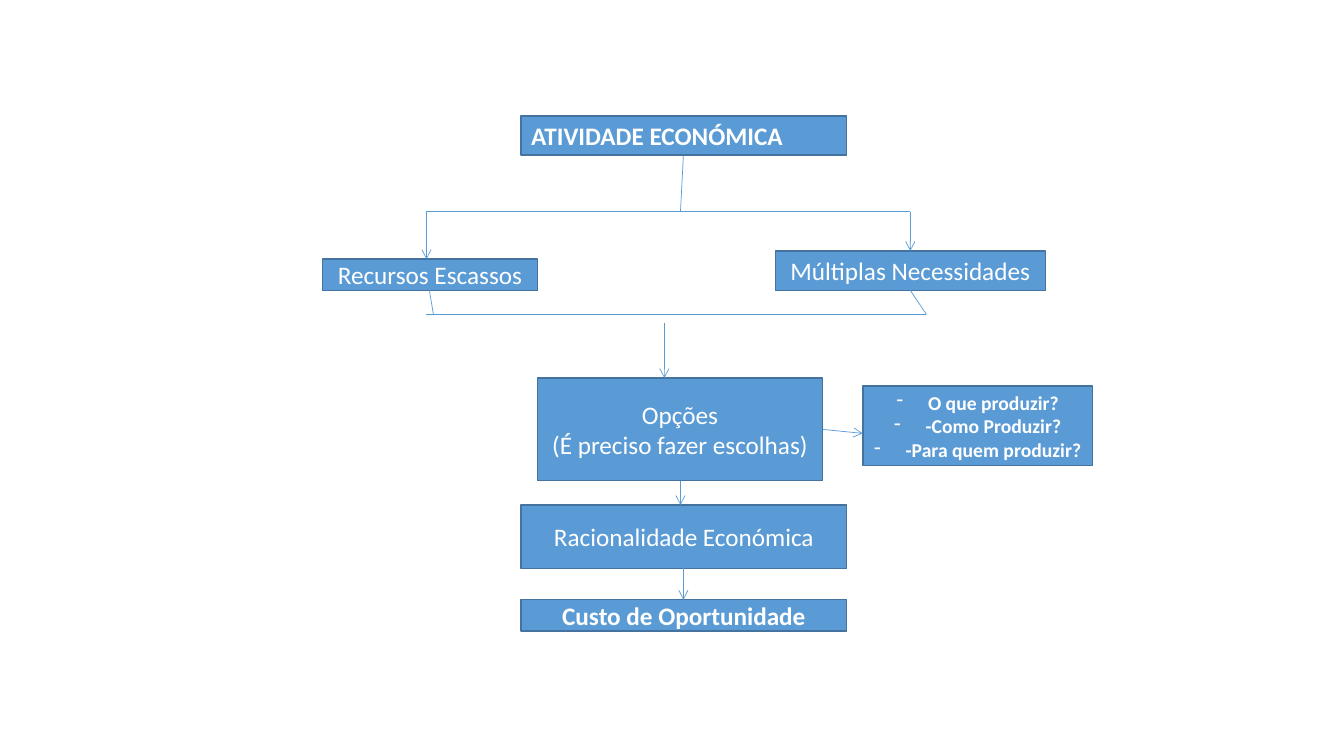
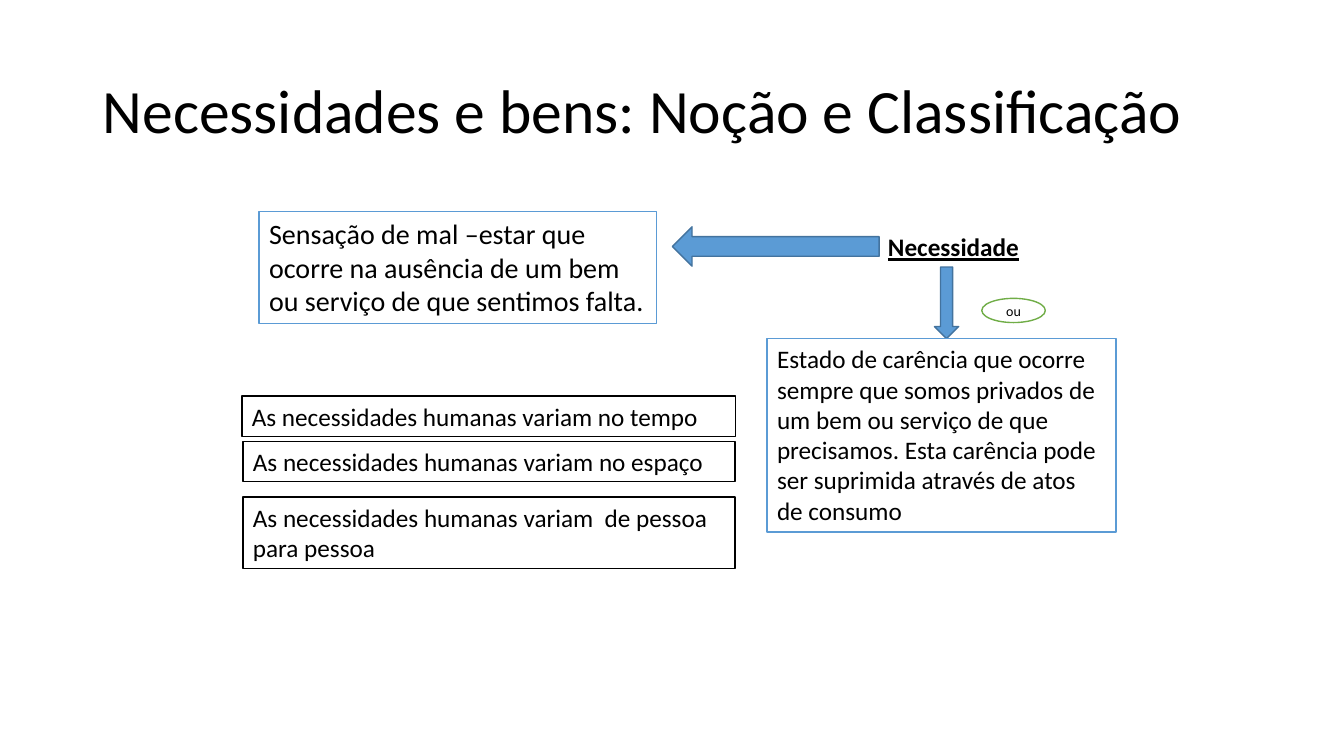
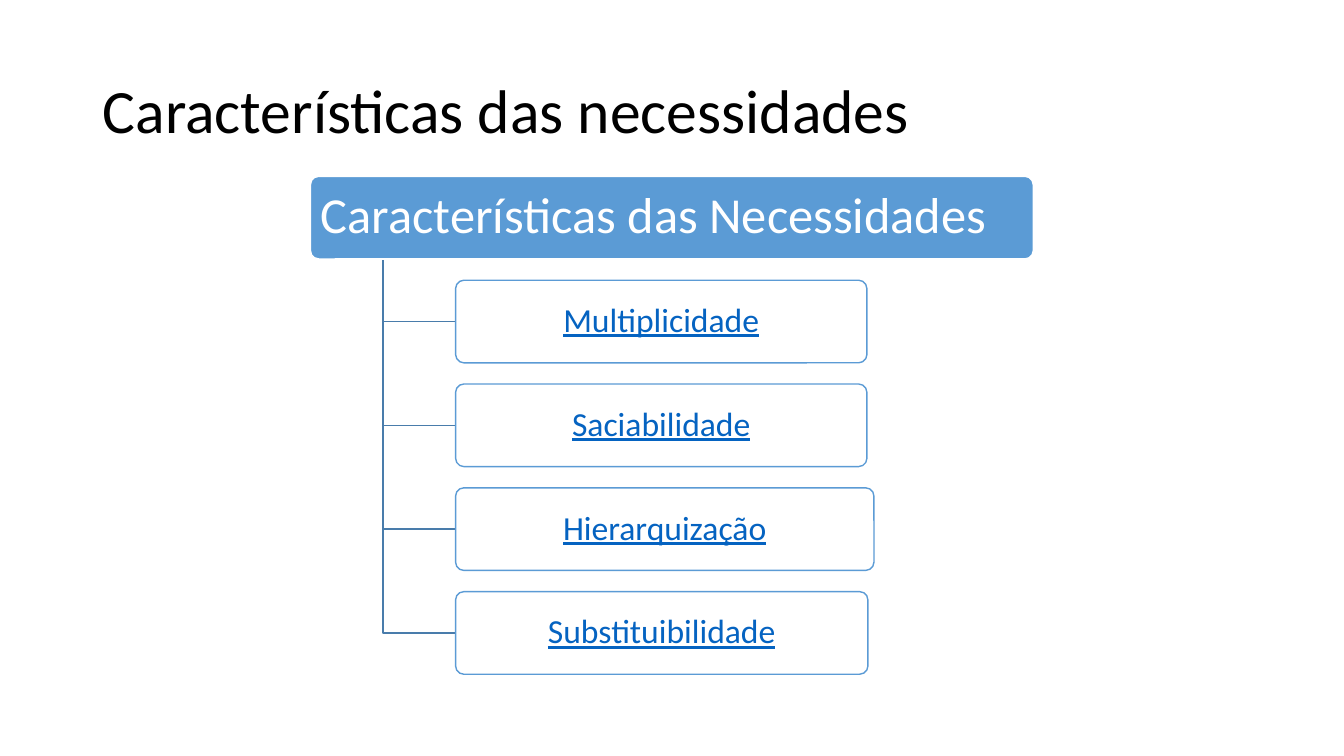
import pptx
import pptx.util
import pptx.dml.color
import pptx.enum.shapes
import pptx.enum.text
import pptx.oxml.ns
import lxml.etree

KIND = pptx.enum.shapes.MSO_SHAPE
ALIGN = pptx.enum.text.PP_ALIGN
ANCHOR = pptx.enum.text.MSO_ANCHOR
FONT = "Calibri"
HUES = {
    "blue": "5B9BD5", "edge": "43739E", "elbow": "497CAB", "link": "0563C1",
    "green": "70AD47", "white": "FFFFFF", "black": "000000",
}
WIDTH = pptx.util.Inches(13.33)
HEIGHT = pptx.util.Inches(7.5)


# Lengths are percentages of the slide's width and height
def across(share):
    return round(WIDTH * share / 100)


def down(share):
    return round(HEIGHT * share / 100)


def frame(box):
    x, y, w, h = box
    return across(x), down(y), across(w), down(h)


def hue(name):
    return pptx.dml.color.RGBColor.from_string(HUES[name])


def node(parent, tag, **attrs):
    return lxml.etree.SubElement(parent, pptx.oxml.ns.qn(tag), attrs)


# Text
def write(holder, lines, size=18, color="white", bold=False, under=False,
          align=ALIGN.CENTER, anchor=ANCHOR.MIDDLE, space=None, dash=False):
    body = holder.text_frame
    body.word_wrap = True
    body.vertical_anchor = anchor
    for i, line in enumerate(lines):
        para = body.add_paragraph() if i else body.paragraphs[0]
        para.alignment = align
        if space:
            para.line_spacing = space
        if dash:
            props = para._p.get_or_add_pPr()
            indent = pptx.util.Pt(22.5)
            props.set("marL", str(indent))
            props.set("indent", str(-indent))
            node(props, "a:buChar", char="-")
        run = para.add_run()
        run.text = line
        font = run.font
        font.name = FONT
        font.size = pptx.util.Pt(size)
        font.bold = bold
        font.underline = under
        font.color.rgb = hue(color)


def title(slide, text):
    head = slide.shapes.title
    head.left, head.top, head.width, head.height = frame((6.9, 5.33, 86.25, 19.33))
    write(head, [text], 44, "black", align=ALIGN.LEFT, space=0.9)


# Shapes and lines
def shape(slide, box, kind=KIND.RECTANGLE, fill="blue", edge="edge"):
    item = slide.shapes.add_shape(kind, *frame(box))
    item.shadow.inherit = False
    item.fill.solid()
    item.fill.fore_color.rgb = hue(fill)
    item.line.color.rgb = hue(edge)
    item.line.width = pptx.util.Pt(1)
    return item


def note(slide, box, text, size=18, edge="black"):
    item = shape(slide, box, fill="white", edge=edge)
    write(item, [text], size, "black", align=ALIGN.LEFT, anchor=ANCHOR.TOP)


def line(slide, x1, y1, x2, y2, arrow=False):
    item = slide.shapes.add_connector(
        pptx.enum.shapes.MSO_CONNECTOR.STRAIGHT,
        across(x1), down(y1), across(x2), down(y2))
    item.line.color.rgb = hue("blue")
    item.line.width = pptx.util.Pt(0.5)
    if arrow:
        node(item.line._get_or_add_ln(), "a:tailEnd", type="arrow")
    node(item._element.spPr, "a:effectLst")


def elbow(slide, x, top, end, mid):
    pen = slide.shapes.build_freeform(across(x), down(top))
    pen.add_line_segments(
        [(across(x), down(mid)), (across(end), down(mid))], close=False)
    item = pen.convert_to_shape()
    item.shadow.inherit = False
    item.fill.background()
    item.line.color.rgb = hue("elbow")
    item.line.width = pptx.util.Pt(1)


def card(slide, box, fill, edge):
    item = shape(slide, box, KIND.ROUNDED_RECTANGLE, fill, edge)
    item.adjustments[0] = 0.1
    body = item.text_frame
    body.margin_left = body.margin_right = pptx.util.Inches(0.08)
    return item


# Slides
def flow(slide):
    left, wide = 38.78, 24.22
    west, east, axis, mid = 31.73, 67.73, 50.63, 50.85
    rail, join, base = 28, 41.6, 38.4
    boxes = [
        ((left, 15.33, wide, 5.2), ["ATIVIDADE ECONÓMICA"],
         {"bold": True, "align": ALIGN.JUSTIFY}),
        ((24, 34.27, 15.98, 4.13), ["Recursos Escassos"], {}),
        ((57.68, 33.2, 20.1, 5.2), ["Múltiplas Necessidades"], {}),
        ((40, 50, 21.2, 13.6), ["Opções", "(É preciso fazer escolhas)"], {}),
        ((64.2, 51.07, 17.1, 10.53),
         ["O que produzir?", "-Como Produzir?", "-Para quem produzir?"],
         {"size": 14, "bold": True, "dash": True}),
        ((left, 66.8, wide, 8.4), ["Racionalidade Económica"], {}),
        ((left, 79.33, wide, 4.13), ["Custo de Oportunidade"], {"bold": True}),
    ]
    for box, lines, style in boxes:
        write(shape(slide, box), lines, **style)

    plain = [
        (mid, 20.6, axis, rail),
        (west, rail, east, rail),
        (31.95, base, 32.25, join),
        (west, join, 68.93, join),
        (68.93, join, east, base),
    ]
    arrows = [
        (west, rail, west, 34.27),
        (east, rail, east, 33.2),
        (49.43, 42.67, 49.43, 50),
        (61.2, 56.8, 64.2, 57.33),
        (axis, 63.6, axis, 66.8),
        (mid, 75.2, mid, 79.33),
    ]
    for ends in plain:
        line(slide, *ends)
    for ends in arrows:
        line(slide, *ends, arrow=True)


def needs(slide):
    title(slide, "Necessidades e bens: Noção e Classificação")
    # Term, its arrows and its two definitions
    note(slide, (19.28, 28, 29.55, 14.8),
         "Sensação de mal –estar que ocorre na ausência de um bem ou serviço "
         "de que sentimos falta.", 20, "blue")
    shape(slide, (50.03, 30, 15.38, 5.2), KIND.LEFT_ARROW)
    term = slide.shapes.add_textbox(*frame((65.33, 30, 16.5, 5.33)))
    write(term, ["Necessidade"], color="black", bold=True, under=True,
          align=ALIGN.LEFT, anchor=ANCHOR.TOP)
    shape(slide, (69.53, 35.33, 1.8, 9.47), KIND.DOWN_ARROW)
    note(slide, (57.08, 44.8, 25.95, 25.6),
         "Estado de carência que ocorre sempre que somos privados de um bem "
         "ou serviço de que precisamos. Esta carência pode ser suprimida "
         "através de atos de consumo", edge="blue")
    # How needs vary
    for box, end in [
        ((18, 52.4, 36.75, 5.33), "no tempo"),
        ((18.08, 58.4, 36.6, 5.33), "no espaço"),
        ((18.08, 65.73, 36.6, 9.47), " de pessoa para pessoa"),
    ]:
        note(slide, box, "As necessidades humanas variam " + end)
    either = shape(slide, (73.05, 39.47, 4.73, 3.2), KIND.OVAL, "white", "green")
    write(either, ["ou"], 10, "black")


def traits(slide):
    title(slide, "Características das necessidades")
    root = card(slide, (23.1, 23.33, 53.78, 10.93), "blue", "white")
    write(root, ["Características das Necessidades"], 36,
          align=ALIGN.LEFT, space=0.9)
    # Branches at equal steps
    left, top, step, high = 33.9, 37.07, 13.73, 10.93
    names = [("Multiplicidade", 30.6), ("Saciabilidade", 30.6),
             ("Hierarquização", 31.13), ("Substituibilidade", 30.68)]
    for i, (name, wide) in enumerate(names):
        y = top + i * step
        elbow(slide, 28.5, 34.4, left, y + high / 2)
        item = card(slide, (left, y, wide, high), "white", "blue")
        write(item, [name], 24, "link", under=True, space=0.9)


def main():
    deck = pptx.Presentation()
    deck.slide_width, deck.slide_height = WIDTH, HEIGHT
    titled, blank = deck.slide_layouts[5], deck.slide_layouts[6]
    for draw, layout in [(flow, blank), (needs, titled), (traits, titled)]:
        draw(deck.slides.add_slide(layout))
    deck.save("out.pptx")


if __name__ == "__main__":
    main()
